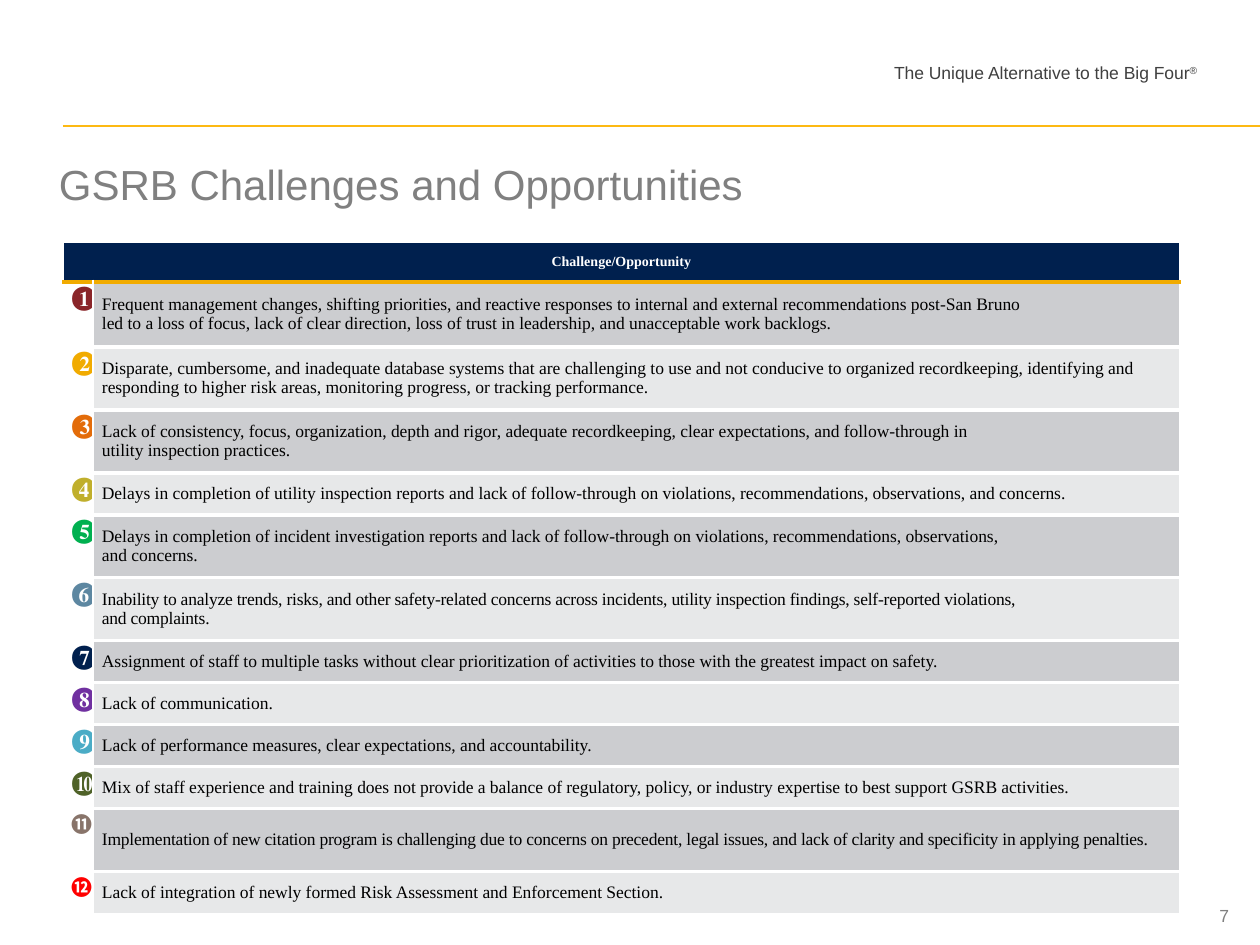
from dataclasses import dataclass

from lxml.etree import SubElement
from pptx import Presentation
from pptx.dml.color import RGBColor as RGB
from pptx.enum.shapes import MSO_CONNECTOR as CONN
from pptx.enum.text import MSO_ANCHOR as ANCHOR, PP_ALIGN as ALIGN
from pptx.oxml.ns import qn
from pptx.util import Emu, Pt

PX = 914400 // 126


@dataclass(frozen=True)
class Theme:
    """Colours, fonts and type sizes of the slide."""
    sans: str = "Arial"
    serif: str = "Times New Roman"
    cjk: str = "Noto Sans CJK JP"
    white: str = "FFFFFF"
    black: str = "000000"
    navy: str = "00204E"
    gold: str = "F1AB00"
    rule: str = "FDB913"
    grey: str = "808080"
    dark: str = "404040"
    bands: tuple = ("CCCDD0", "E7E8E9")
    title: int = 24
    body: int = 10
    header: int = 8
    marker: int = 16
    small_marker: int = 12


T = Theme()
HEADER_H, TALL, SHORT = 40, 63, 42
CELL_PAD = 9
TIGHT = -10

# marker, colour, row height, lines of text, letter spacing
ROWS = [
    ("❶", "8A2529", 65, [
        "Frequent management changes, shifting priorities, and reactive responses to internal "
        "and external recommendations post-San Bruno ",
        "led to a loss of focus, lack of clear direction, loss of trust in leadership, and "
        "unacceptable work backlogs."], 0),
    ("❷", T.gold, TALL, [
        "Disparate, cumbersome, and inadequate database systems that are challenging to use and "
        "not conducive to organized recordkeeping, identifying and responding to higher risk "
        "areas, monitoring progress, or tracking performance."], 0),
    ("❸", "E36C0A", TALL, [
        "Lack of consistency, focus, organization, depth and rigor, adequate recordkeeping, "
        "clear expectations, and follow-through in ",
        "utility inspection practices."], 0),
    ("❹", "C0AF2C", SHORT, [
        "Delays in completion of utility inspection reports and lack of follow-through on "
        "violations, recommendations, observations, and concerns."], 0),
    ("❺", "00B050", TALL, [
        "Delays in completion of incident investigation reports and lack of follow-through on "
        "violations, recommendations, observations, ",
        "and concerns."], 0),
    ("❻", "5D87A1", TALL, [
        "Inability to analyze trends, risks, and other safety-related concerns across incidents, "
        "utility inspection findings, self-reported violations, ",
        "and complaints."], TIGHT),
    ("❼", T.navy, SHORT, [
        "Assignment of staff to multiple tasks without clear prioritization of activities to "
        "those with the greatest impact on safety."], 0),
    ("❽", "7030A0", SHORT, ["Lack of communication."], 0),
    ("❾", "4BACC6", SHORT, [
        "Lack of performance measures, clear expectations, and accountability."], 0),
    ("❿", "4F6228", SHORT, [
        "Mix of staff experience and training does not provide a balance of regulatory, policy, "
        "or industry expertise to best support GSRB activities."], 0),
    ("⓫", "88746A", TALL, [
        "Implementation of new citation program is challenging due to concerns on precedent, "
        "legal issues, and lack of clarity and specificity in applying penalties."], TIGHT),
    ("⓬", "FF0000", SHORT, [
        "Lack of integration of newly formed Risk Assessment and Enforcement Section."], 0),
]


def px(n):
    """Turn pixels into EMU."""
    return Emu(n * PX)


def add_run(p, text, font, size, color, bold=False, spacing=0):
    """Append one formatted run to a paragraph."""
    r = p.add_run()
    r.text = text
    r.font.name, r.font.size, r.font.bold = font, Pt(size), bold
    r.font.color.rgb = RGB.from_string(color)
    if spacing:
        r._r.get_or_add_rPr().set("spc", str(spacing))
    return r


def add_text_box(slide, box, inset=(0, 0), align=ALIGN.LEFT, anchor=ANCHOR.TOP):
    """Add a wrapping text box and return its first paragraph."""
    tf = slide.shapes.add_textbox(*map(px, box)).text_frame
    tf.word_wrap, tf.vertical_anchor = True, anchor
    tf.margin_left = tf.margin_right = px(inset[0])
    tf.margin_top = tf.margin_bottom = px(inset[1])
    p = tf.paragraphs[0]
    p.alignment = align
    return p


def add_rule(slide, x1, x2, y):
    """Add the thin horizontal rule under the tagline."""
    s = slide.shapes.add_connector(CONN.STRAIGHT, px(x1), px(y), px(x2), px(y))
    s.line.color.rgb, s.line.width = RGB.from_string(T.rule), Pt(0.75)
    SubElement(s._element.spPr, qn("a:effectLst"))


def set_borders(cell, top, bottom):
    """Draw white side borders and the given top and bottom borders."""
    side = (T.white, 1)
    tc_pr = cell._tc.get_or_add_tcPr()
    for tag, (color, width) in zip(("lnL", "lnR", "lnT", "lnB"), (side, side, top, bottom)):
        ln = SubElement(tc_pr, qn(f"a:{tag}"), w=str(Pt(width)))
        SubElement(SubElement(ln, qn("a:solidFill")), qn("a:srgbClr"), val=color)


def style_cell(cell, top, bottom, fill=None, anchor=ANCHOR.MIDDLE, align=ALIGN.LEFT):
    """Set borders, fill and layout of a cell and return its paragraph."""
    set_borders(cell, top, bottom)
    if fill:
        cell.fill.solid()
        cell.fill.fore_color.rgb = RGB.from_string(fill)
    else:
        cell.fill.background()
    cell.margin_left = cell.margin_right = px(CELL_PAD)
    cell.margin_top = cell.margin_bottom = 0
    cell.vertical_anchor = anchor
    p = cell.text_frame.paragraphs[0]
    p.alignment = align
    return p


def add_marker(p, marker, color):
    """Write a circled number, in the CJK font above ten."""
    above_ten = marker in "⓫⓬"
    font = T.cjk if above_ten else T.serif
    size = T.small_marker if above_ten else T.marker
    r = add_run(p, marker, font, size, color, bold=True)
    SubElement(r._r.get_or_add_rPr(), qn("a:ea"), typeface=font)


def add_challenges(slide, x, y, widths):
    """Build the table of challenges."""
    heights = [HEADER_H] + [row[2] for row in ROWS]
    table = slide.shapes.add_table(len(heights), len(widths), px(x), px(y),
                                   px(sum(widths)), px(sum(heights))).table
    table.first_row = table.horz_banding = False
    for col, w in zip(table.columns, widths):
        col.width = px(w)
    for row, h in zip(table.rows, heights):
        row.height = px(h)

    thin, gap, accent = (T.white, 1), (T.white, 2.25), (T.gold, 3)
    table.cell(0, 0).merge(table.cell(0, 1))
    head, _ = [style_cell(table.cell(0, c), thin, accent, T.navy, align=ALIGN.CENTER)
               for c in range(2)]
    add_run(head, "Challenge/Opportunity", T.serif, T.header, T.white, bold=True)

    for i, (marker, color, _, lines, spacing) in enumerate(ROWS):
        top = accent if i == 0 else gap
        bottom = thin if i == len(ROWS) - 1 else gap
        p = style_cell(table.cell(i + 1, 0), top, bottom, anchor=ANCHOR.TOP, align=ALIGN.CENTER)
        add_marker(p, marker, color)
        p = style_cell(table.cell(i + 1, 1), top, bottom, T.bands[i % 2])
        for n, line in enumerate(lines):
            if n:
                p.add_line_break()
            add_run(p, line, T.serif, T.body, T.black, spacing=spacing)


def main():
    """Build the slide and save it."""
    prs = Presentation()
    prs.slide_width, prs.slide_height = px(1260), px(945)
    slide = prs.slides.add_slide(prs.slide_layouts[6])

    p = add_text_box(slide, (882, 56, 346, 68), (12, 6), ALIGN.JUSTIFY)
    add_run(p, "The Unique Alternative to the Big Four", T.sans, T.body, T.dark)
    r = add_run(p, "®", T.sans, T.body, T.dark)
    r._r.get_or_add_rPr().set("baseline", "30000")
    add_rule(slide, 63, 1260, 126)

    p = add_text_box(slide, (59, 136, 1201, 95), anchor=ANCHOR.MIDDLE)
    add_run(p, "GSRB Challenges and Opportunities", T.sans, T.title, T.grey)
    add_challenges(slide, 63, 242, (30, 1087))

    p = add_text_box(slide, (1166, 905, 63, 21), align=ALIGN.RIGHT)
    add_run(p, "7", T.sans, T.body, T.grey)
    prs.save("out.pptx")


if __name__ == "__main__":
    main()
